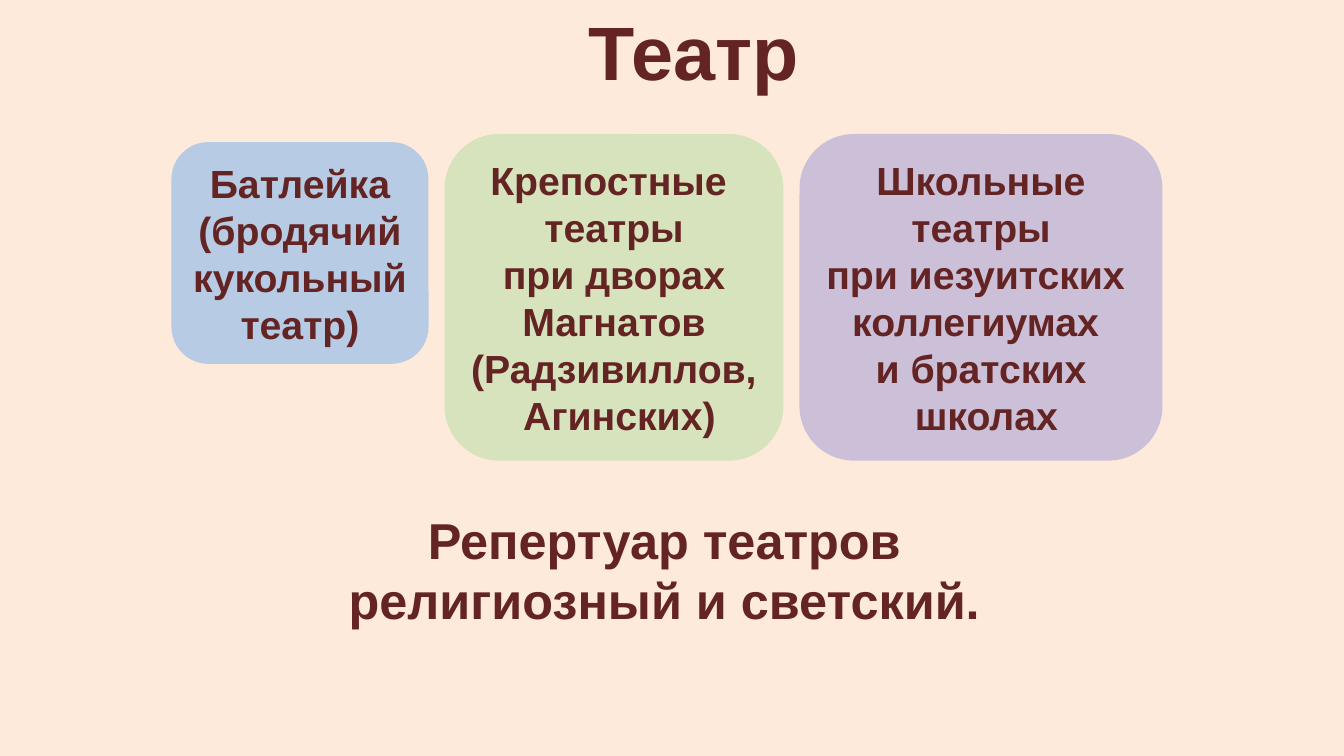
from pptx import Presentation
from pptx.dml.color import RGBColor
from pptx.enum.shapes import MSO_SHAPE
from pptx.enum.text import MSO_ANCHOR, PP_ALIGN
from pptx.util import Inches, Pt

BACKGROUND = RGBColor(0xFD, 0xEA, 0xDA)
INK = RGBColor(0x63, 0x24, 0x23)
BLUE = RGBColor(0xB7, 0xCC, 0xE4)
GREEN = RGBColor(0xD6, 0xE3, 0xBC)
PURPLE = RGBColor(0xCC, 0xC0, 0xD9)

CARDS_LEFT, CARDS_TOP, CARD_GAP = 1.7, 1.33, 0.16
CARDS = [
    (2.55, 2.2, 0.08, BLUE,
     ["Батлейка", "(бродячий", "кукольный", "театр)"]),
    (3.36, 3.24, 0, GREEN,
     ["Крепостные ", "театры", "при дворах", "Магнатов",
      "(Радзивиллов,", " Агинских)"]),
    (3.6, 3.24, 0, PURPLE,
     ["Школьные", "театры", "при иезуитских ", "коллегиумах ",
      "и братских", " школах"]),
]


def write(tf, lines, size, anchor=MSO_ANCHOR.TOP, wrap=True):
    tf.word_wrap = wrap
    tf.vertical_anchor = anchor
    for i, line in enumerate(lines):
        p = tf.paragraphs[0] if i == 0 else tf.add_paragraph()
        p.text = line
        p.alignment = PP_ALIGN.CENTER
        p.font.name = "Arial"
        p.font.size = Pt(size)
        p.font.bold = True
        p.font.color.rgb = INK


def add_title(s, left, top, width, height):
    sp = s.shapes.title
    sp.left, sp.top, sp.width, sp.height = map(Inches, (left, top, width, height))
    write(sp.text_frame, ["Театр"], 54, wrap=False)


def add_card(s, left, top, width, height, fill, lines):
    sp = s.shapes.add_shape(MSO_SHAPE.ROUNDED_RECTANGLE,
                            *map(Inches, (left, top, width, height)))
    sp.shadow.inherit = False
    sp.fill.solid()
    sp.fill.fore_color.rgb = fill
    sp.line.fill.background()
    write(sp.text_frame, lines, 28, MSO_ANCHOR.MIDDLE, wrap=False)


def add_cards(s, left, top):
    for width, height, drop, fill, lines in CARDS:
        add_card(s, left, top + drop, width, height, fill, lines)
        left += width + CARD_GAP


def add_summary(s, left, top, width, height):
    sp = s.shapes.add_textbox(*map(Inches, (left, top, width, height)))
    write(sp.text_frame, ["Репертуар театров религиозный и светский."], 36)


def main():
    prs = Presentation()
    prs.slide_width, prs.slide_height = Inches(13.33), Inches(7.5)
    s = prs.slides.add_slide(prs.slide_layouts[5])
    s.background.fill.solid()
    s.background.fill.fore_color.rgb = BACKGROUND
    add_title(s, 5.73, 0, 2.3, 1.01)
    add_cards(s, CARDS_LEFT, CARDS_TOP)
    add_summary(s, 2.92, 5, 7.34, 1.31)
    prs.save("out.pptx")


if __name__ == "__main__":
    main()
